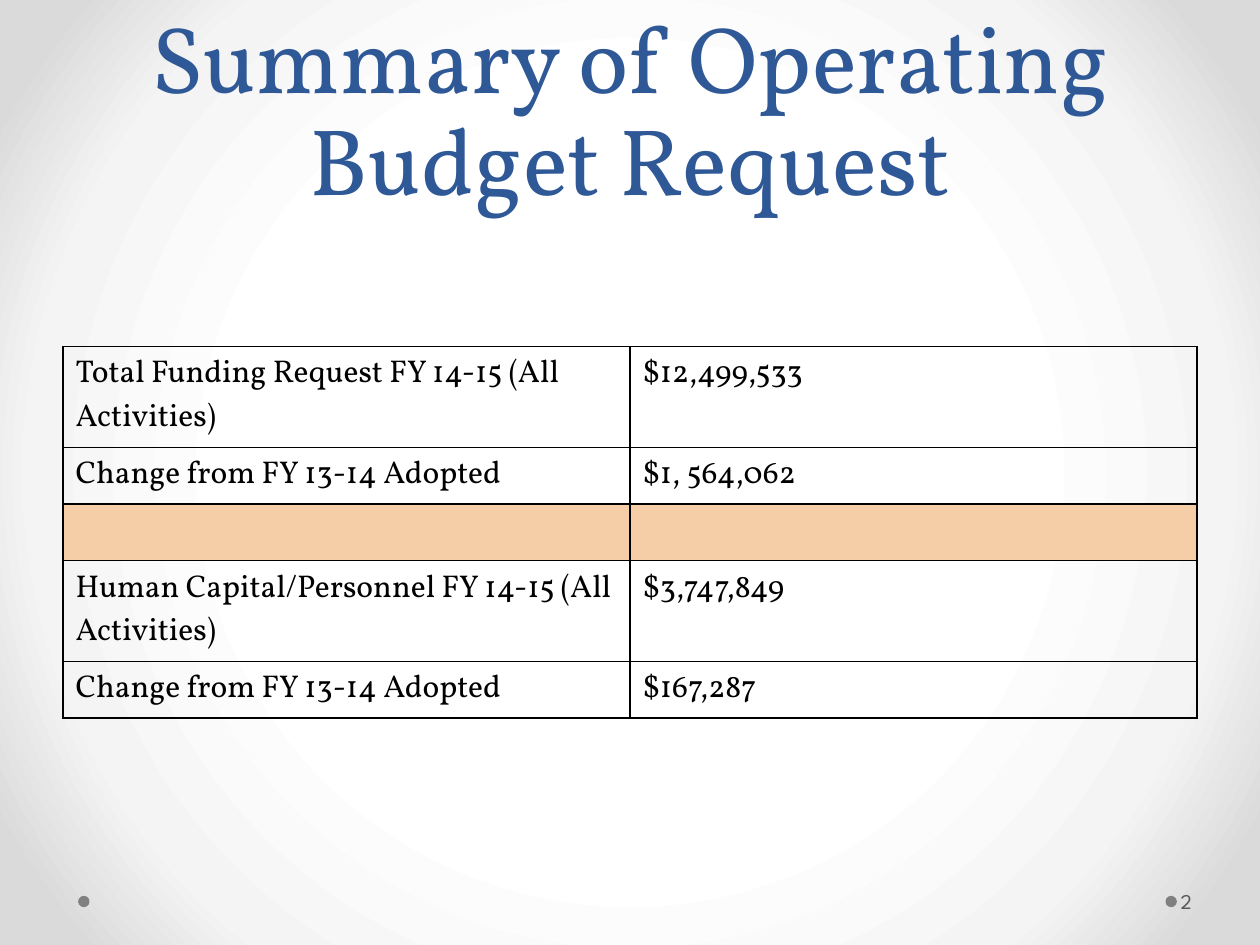
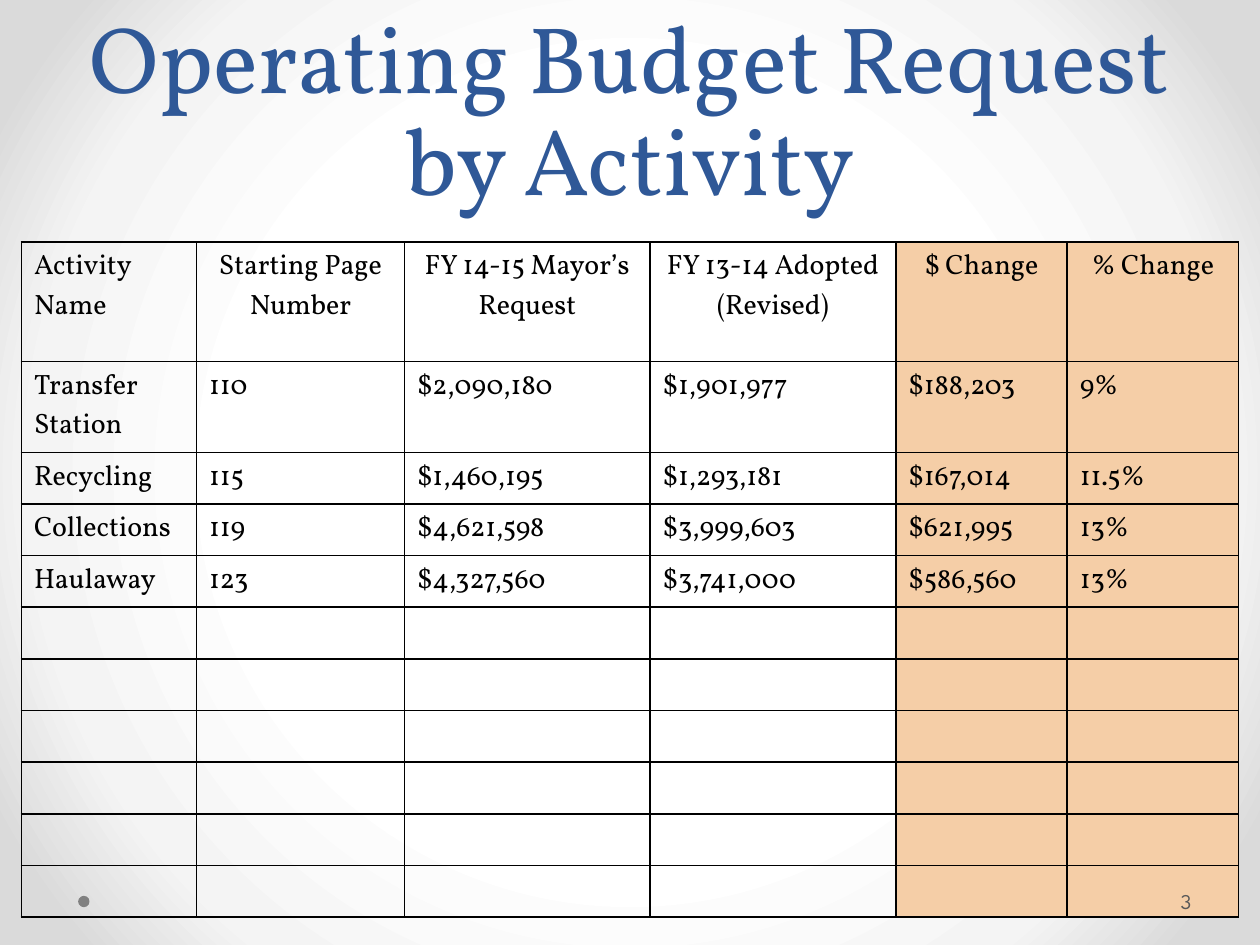
import pptx
import pptx.dml.color
import pptx.enum.shapes
import pptx.enum.text
import pptx.oxml
import pptx.oxml.ns
import pptx.util
from dataclasses import dataclass

Inches = pptx.util.Inches
Pt = pptx.util.Pt
ALIGN = pptx.enum.text.PP_ALIGN
ANCHOR = pptx.enum.text.MSO_ANCHOR

SUMMARY = {
    "title": "Summary of Operating Budget Request",
    "number": 2,
    "rows": [
        ("Total Funding Request FY 14-15 (All Activities)", "$12,499,533"),
        ("Change from FY 13-14 Adopted", "$1, 564,062"),
        ("", ""),
        ("Human Capital/Personnel FY 14-15 (All Activities)", "$3,747,849"),
        ("Change from FY 13-14 Adopted", "$167,287"),
    ],
    "left": 0.5,
    "top": 2.75,
    "widths": [4.5, 4.5],
    "heights": [0.8, 0.45, 0.45, 0.8, 0.45],
    "size": 18,
    "header": False,
    "accent_rows": {2},
    "accent_columns": set(),
}

BLANK_ROWS = 6
ACTIVITIES = {
    "title": "Operating Budget Request by Activity",
    "number": 3,
    "rows": [
        ("Activity Name", "Starting Page Number", "FY 14-15 Mayor’s Request",
         "FY 13-14 Adopted\n(Revised)", "$ Change", "% Change"),
        ("Transfer Station", "110", "$2,090,180", "$1,901,977", "$188,203", "9%"),
        ("Recycling", "115", "$1,460,195", "$1,293,181", "$167,014", "11.5%"),
        ("Collections", "119", "$4,621,598", "$3,999,603", "$621,995", "13%"),
        ("Haulaway", "123", "$4,327,560", "$3,741,000", "$586,560", "13%"),
    ] + [("",) * 6] * BLANK_ROWS,
    "left": 0.17,
    "top": 1.92,
    "widths": [1.39, 1.65, 1.95, 1.95, 1.36, 1.36],
    "heights": [0.95, 0.72] + [0.41] * (3 + BLANK_ROWS),
    "size": 16,
    "header": True,
    "accent_rows": set(),
    "accent_columns": {4, 5},
}


@dataclass(frozen=True)
class Theme:
    title_color: str = "2F5897"
    text_color: str = "000000"
    number_color: str = "595959"
    dot_color: str = "808080"
    accent_color: str = "F5CEA7"
    background_stops: tuple = ((50, "FFFFFF"), (76, "F4F4F4"), (92, "DADADA"))
    serif: str = "Vollkorn"
    sans: str = "League Spartan"
    title_size: int = 54
    title_spacing: int = 58
    number_size: int = 12
    border_width: int = 1


THEME = Theme()
DOT_LEFTS = (9.25, 0.62)
DOT_TOP = 7.11
DOT_SIZE = 0.09


def color(value):
    return pptx.dml.color.RGBColor.from_string(value)


def write_text(frame, text, *, size, font=THEME.serif, fill=THEME.text_color,
               align=ALIGN.LEFT, spacing=None):
    frame.word_wrap = True
    for index, line in enumerate(text.split("\n")):
        paragraph = frame.add_paragraph() if index else frame.paragraphs[0]
        paragraph.alignment = align
        if spacing:
            paragraph.line_spacing = Pt(spacing)
        if line:
            run = paragraph.add_run()
            run.text = line
            run.font.name = font
            run.font.size = Pt(size)
            run.font.color.rgb = color(fill)


def add_background(slide):
    stops = "".join(
        f'<a:gs pos="{position * 1000}"><a:srgbClr val="{value}"/></a:gs>'
        for position, value in THEME.background_stops)
    background = pptx.oxml.parse_xml(
        f'<p:bg {pptx.oxml.ns.nsdecls("p", "a")}><p:bgPr>'
        f'<a:gradFill><a:gsLst>{stops}</a:gsLst><a:path path="circle">'
        '<a:fillToRect l="50000" t="50000" r="50000" b="50000"/></a:path>'
        '</a:gradFill><a:effectLst/></p:bgPr></p:bg>')
    slide.element.cSld.insert(0, background)


def add_dots(slide):
    for left in DOT_LEFTS:
        dot = slide.shapes.add_shape(
            pptx.enum.shapes.MSO_SHAPE.OVAL, Inches(left), Inches(DOT_TOP),
            Inches(DOT_SIZE), Inches(DOT_SIZE))
        dot.shadow.inherit = False
        dot.fill.solid()
        dot.fill.fore_color.rgb = color(THEME.dot_color)
        dot.line.fill.background()


def add_title(slide, title):
    box = slide.shapes.add_textbox(Inches(0.5), 0, Inches(9), Inches(1.75))
    box.text_frame.vertical_anchor = ANCHOR.BOTTOM
    write_text(box.text_frame, title, size=THEME.title_size,
               fill=THEME.title_color, align=ALIGN.CENTER,
               spacing=THEME.title_spacing)


def add_page_number(slide, number):
    box = slide.shapes.add_textbox(
        Inches(9.34), Inches(6.95), Inches(0.61), Inches(0.4))
    box.text_frame.vertical_anchor = ANCHOR.MIDDLE
    box.text_frame.margin_left = Inches(0.03)
    box.text_frame.margin_right = Inches(0.05)
    write_text(box.text_frame, str(number), size=THEME.number_size,
               font=THEME.sans, fill=THEME.number_color)


def add_borders(cell):
    properties = cell._tc.get_or_add_tcPr()
    for index, side in enumerate(("lnL", "lnR", "lnT", "lnB")):
        properties.insert(index, pptx.oxml.parse_xml(
            f'<a:{side} {pptx.oxml.ns.nsdecls("a")} w="{Pt(THEME.border_width)}">'
            f'<a:solidFill><a:srgbClr val="{THEME.text_color}"/></a:solidFill>'
            f'</a:{side}>'))


def add_budget_table(slide, content):
    rows, widths, heights = content["rows"], content["widths"], content["heights"]
    table = slide.shapes.add_table(
        len(rows), len(widths), Inches(content["left"]), Inches(content["top"]),
        Inches(sum(widths)), Inches(sum(heights))).table
    table.first_row = False
    table.horz_banding = False
    for column, width in zip(table.columns, widths):
        column.width = Inches(width)
    for row, height in zip(table.rows, heights):
        row.height = Inches(height)
    for row_index, values in enumerate(rows):
        for column_index, value in enumerate(values):
            cell = table.cell(row_index, column_index)
            centred = content["header"] and row_index == 0 and column_index > 0
            write_text(cell.text_frame, value, size=content["size"],
                       align=ALIGN.CENTER if centred else ALIGN.LEFT)
            if (row_index in content["accent_rows"]
                    or column_index in content["accent_columns"]):
                cell.fill.solid()
                cell.fill.fore_color.rgb = color(THEME.accent_color)
            else:
                cell.fill.background()
            add_borders(cell)


def main():
    presentation = pptx.Presentation()
    presentation.slide_width = Inches(10)
    presentation.slide_height = Inches(7.5)
    for content in (SUMMARY, ACTIVITIES):
        slide = presentation.slides.add_slide(presentation.slide_layouts[6])
        add_background(slide)
        add_dots(slide)
        add_title(slide, content["title"])
        add_budget_table(slide, content)
        add_page_number(slide, content["number"])
    presentation.save("out.pptx")


if __name__ == "__main__":
    main()
